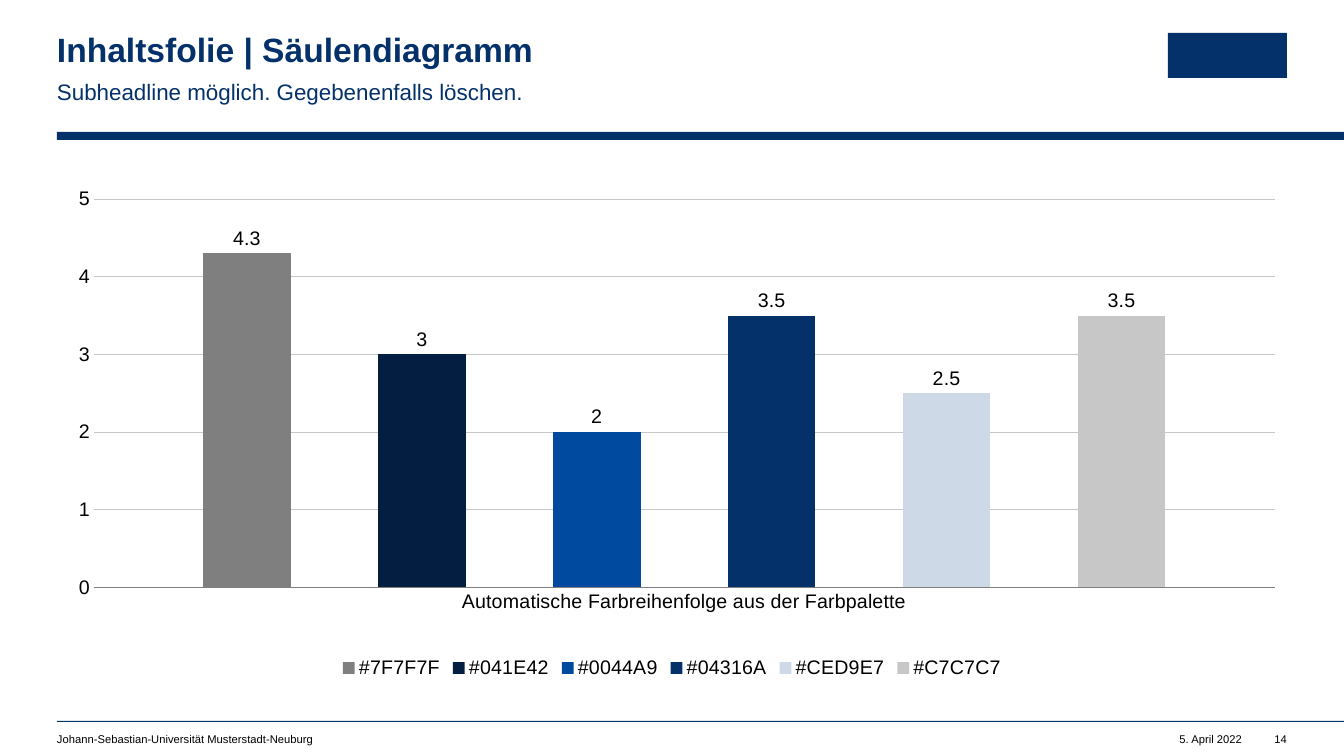
from lxml.etree import SubElement
from pptx import Presentation
from pptx.chart.data import CategoryChartData
from pptx.dml.color import RGBColor
from pptx.enum.chart import XL_CHART_TYPE as ChartType
from pptx.enum.chart import XL_LABEL_POSITION as LabelPosition
from pptx.enum.chart import XL_LEGEND_POSITION as LegendPosition
from pptx.enum.chart import XL_TICK_MARK as TickMark
from pptx.enum.shapes import MSO_SHAPE as Preset
from pptx.enum.text import MSO_ANCHOR as Anchor
from pptx.enum.text import MSO_AUTO_SIZE as AutoSize
from pptx.enum.text import PP_ALIGN as Align
from pptx.oxml.ns import qn
from pptx.util import Emu, Pt

PAGE_SIZE = (1344, 756)
EMU_PER_PX = 12192000 / PAGE_SIZE[0]
FONT = "Arial"

BLACK = RGBColor(0x00, 0x00, 0x00)
GRAY = RGBColor(0x7F, 0x7F, 0x7F)
NIGHT = RGBColor(0x04, 0x1E, 0x42)
BLUE = RGBColor(0x00, 0x4A, 0x9F)
NAVY = RGBColor(0x04, 0x31, 0x6A)
PALE_BLUE = RGBColor(0xCE, 0xD9, 0xE7)
LIGHT_GRAY = RGBColor(0xC7, 0xC7, 0xC7)

CATEGORY = "Automatische Farbreihenfolge aus der Farbpalette"
COLUMNS = [
    ("#7F7F7F", 4.3, GRAY),
    ("#041E42", 3, NIGHT),
    ("#0044A9", 2, BLUE),
    ("#04316A", 3.5, NAVY),
    ("#CED9E7", 2.5, PALE_BLUE),
    ("#C7C7C7", 3.5, LIGHT_GRAY),
]
PLOT_FRAME = {"x": 0.03, "y": 0.04, "w": 0.96, "h": 0.77}


def px(length):
    return Emu(round(length * EMU_PER_PX))


def set_font(font, size, color, bold=False):
    font.name = FONT
    font.size = Pt(size)
    font.bold = bold
    font.color.rgb = color


def write(box, text, size, color, bold=False, align=Align.LEFT, spacing=1.0):
    frame = box.text_frame
    frame.margin_left = frame.margin_top = 0
    frame.margin_right = frame.margin_bottom = 0
    frame.word_wrap = True
    frame.auto_size = AutoSize.NONE
    frame.vertical_anchor = Anchor.TOP
    frame.text = text
    para = frame.paragraphs[0]
    para.alignment = align
    para.line_spacing = spacing
    set_font(para.font, size, color, bold)


def add_text(page, area, text, size, color, **style):
    box = page.shapes.add_textbox(*map(px, area))
    write(box, text, size, color, **style)


def add_title(page, area, text):
    title = page.shapes.title
    title.left, title.top, title.width, title.height = map(px, area)
    write(title, text, 24, NAVY, bold=True, spacing=0.9)


def add_block(page, area):
    block = page.shapes.add_shape(Preset.RECTANGLE, *map(px, area))
    block.shadow.inherit = False
    block.fill.solid()
    block.fill.fore_color.rgb = NAVY
    block.line.fill.background()


def place_plot(chart):
    plot_area = chart.element.find(".//" + qn("c:plotArea"))
    for layout in plot_area.findall(qn("c:layout")):
        plot_area.remove(layout)
    layout = SubElement(plot_area, qn("c:layout"))
    plot_area.insert(0, layout)
    manual = SubElement(layout, qn("c:manualLayout"))
    settings = {"layoutTarget": "inner", "xMode": "edge", "yMode": "edge", **PLOT_FRAME}
    for name, value in settings.items():
        SubElement(manual, qn("c:" + name)).set("val", str(value))


def format_axes(chart):
    for axis in (chart.category_axis, chart.value_axis):
        axis.major_tick_mark = axis.minor_tick_mark = TickMark.NONE
        set_font(axis.tick_labels.font, 14, BLACK)
    base_line = chart.category_axis.format.line
    base_line.color.rgb = GRAY
    base_line.width = Pt(0.5)
    value_axis = chart.value_axis
    value_axis.minimum_scale = 0
    value_axis.maximum_scale = 5
    value_axis.major_unit = 1
    value_axis.format.line.fill.background()
    grid_line = value_axis.major_gridlines.format.line
    grid_line.color.rgb = LIGHT_GRAY
    grid_line.width = Pt(0.5)


def add_column_chart(page, area):
    data = CategoryChartData()
    data.categories = [CATEGORY]
    for name, value, _ in COLUMNS:
        data.add_series(name, [value])
    chart = page.shapes.add_chart(
        ChartType.COLUMN_CLUSTERED, *map(px, area), data
    ).chart
    set_font(chart.font, 14, BLACK)
    chart.has_title = False
    chart.has_legend = True
    chart.legend.position = LegendPosition.BOTTOM
    chart.legend.include_in_layout = False
    set_font(chart.legend.font, 14, BLACK)
    plot = chart.plots[0]
    plot.vary_by_categories = False
    plot.gap_width = 250
    plot.overlap = -100
    for series, (_, _, color) in zip(plot.series, COLUMNS):
        series.format.fill.solid()
        series.format.fill.fore_color.rgb = color
        labels = series.data_labels
        labels.show_value = True
        labels.position = LabelPosition.OUTSIDE_END
        set_font(labels.font, 14, BLACK)
    format_axes(chart)
    place_plot(chart)


def main():
    deck = Presentation()
    deck.slide_width, deck.slide_height = map(px, PAGE_SIZE)
    page = deck.slides.add_slide(deck.slide_layouts[5])
    header_rule = (57, 132, 1287, 8)
    footer_rule = (57, 721, 1287, 1)
    logo_block = (1168, 33, 119, 45)
    for area in (header_rule, footer_rule, logo_block):
        add_block(page, area)
    add_title(page, (57, 33, 755, 36), "Inhaltsfolie | Säulendiagramm")
    add_text(page, (57, 76, 755, 27), "Subheadline möglich. Gegebenenfalls löschen.",
             16, NAVY, spacing=1.1)
    add_column_chart(page, (57, 179, 1230, 504))
    add_text(page, (57, 732, 603, 13),
             "Johann-Sebastian-Universität Musterstadt-Neuburg", 8, BLACK)
    add_text(page, (1148, 732, 94, 13), "5. April 2022", 8, BLACK, align=Align.RIGHT)
    add_text(page, (1266, 732, 21, 13), "14", 8, BLACK, align=Align.RIGHT)
    deck.save("out.pptx")


if __name__ == "__main__":
    main()
